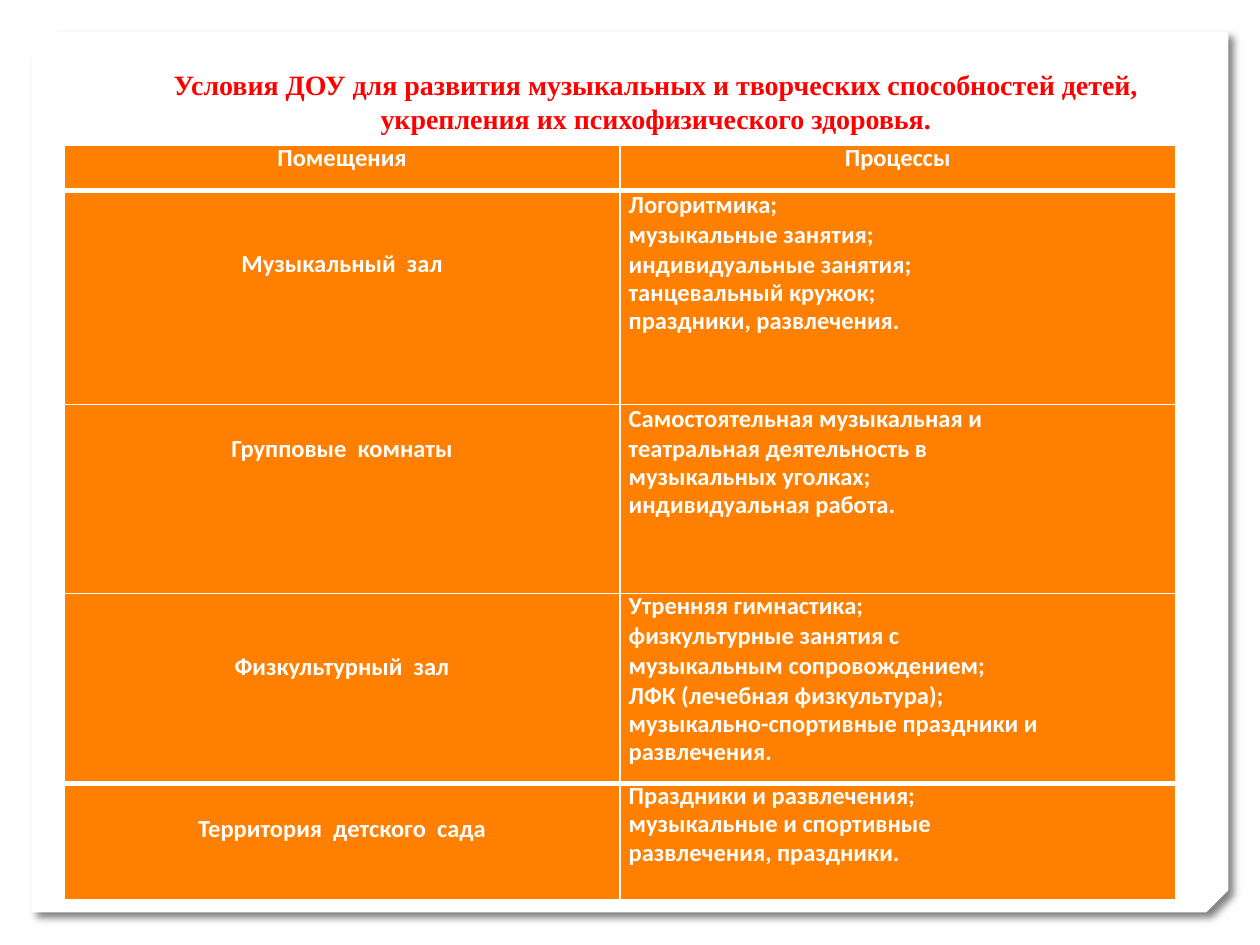
import pptx
import pptx.util
import pptx.dml.color
import pptx.enum.shapes
import pptx.enum.text
import pptx.oxml

Inches, Pt = pptx.util.Inches, pptx.util.Pt
Align = pptx.enum.text.PP_ALIGN
Anchor = pptx.enum.text.MSO_ANCHOR
NS = 'xmlns:a="http://schemas.openxmlformats.org/drawingml/2006/main"'
HUES = {"white": "FFFFFF", "orange": "FF7F01", "red": "FF0000", "shade": "000000"}
CELL = {"name": "Calibri", "size": Pt(14), "bold": True}
HEAD = {"name": "Times New Roman", "size": Pt(16), "bold": True}


def rgb(hue):
    return pptx.dml.color.RGBColor.from_string(HUES[hue])


def write(para, text, form, hue):
    run = para.add_run()
    run.text = text
    for key, value in form.items():
        setattr(run.font, key, value)
    run.font.color.rgb = rgb(hue)


deck = pptx.Presentation()
deck.slide_width, deck.slide_height = Inches(10), Inches(7.5)
slide = deck.slides.add_slide(deck.slide_layouts[6])

# Sheet with cut corners and a soft shadow
sheet = slide.shapes.add_shape(
    pptx.enum.shapes.MSO_SHAPE.SNIP_2_DIAG_RECTANGLE,
    Inches(0.25), Inches(0.25), Inches(9.5), Inches(6.99))
sheet.adjustments[0], sheet.adjustments[1] = 0.025, 0
sheet.fill.solid()
sheet.fill.fore_color.rgb = rgb("white")
sheet.line.fill.background()
sheet.shadow.inherit = False
sheet.element.spPr.append(pptx.oxml.parse_xml(
    f'<a:effectLst {NS}><a:outerShdw blurRad="{Pt(4)}" dist="{Pt(5)}" '
    f'dir="2700000" algn="tl" rotWithShape="0"><a:srgbClr val="{HUES["shade"]}">'
    '<a:alpha val="50000"/></a:srgbClr></a:outerShdw></a:effectLst>'))
for old in sheet.element.spPr.findall(pptx.oxml.ns.qn("a:effectLst"))[:-1]:
    sheet.element.spPr.remove(old)

# Table: room, gap above it, and its activities with exact line spacing
rows = [
    (0.36, 0, "Помещения", [("Процессы", 15.8)]),
    (1.7, 0.47, "Музыкальный  зал", [
        ("Логоритмика;", None),
        ("музыкальные занятия; индивидуальные занятия;", None),
        ("танцевальный кружок;", 16.1),
        ("праздники, развлечения.", 16.1)]),
    (1.5, 0.24, "Групповые  комнаты", [
        ("Самостоятельная музыкальная и театральная деятельность в", None),
        ("музыкальных уголках; индивидуальная работа.", 16.1)]),
    (1.51, 0.47, "Физкультурный  зал", [
        ("Утренняя гимнастика;", 15.8),
        ("физкультурные занятия с", None),
        ("музыкальным сопровождением;", None),
        ("ЛФК (лечебная физкультура);", None),
        ("музыкально-спортивные праздники и развлечения.", 16.1)]),
    (0.92, 0.24, "Территория  детского  сада", [
        ("Праздники и развлечения;", 15.8),
        ("музыкальные и спортивные развлечения, праздники.", 16.1)]),
]
last = len(rows) - 1
grid = slide.shapes.add_table(
    len(rows), 2, Inches(0.51), Inches(1.15), Inches(8.82), Inches(5.98)).table
grid.first_row = grid.horz_banding = False

for r, (tall, gap, room, acts) in enumerate(rows):
    grid.rows[r].height = Inches(tall)
    for c, lines in enumerate([[(room, 15.8 if r == 0 else None)], acts]):
        cell = grid.cell(r, c)
        inset = {"margin_left": 0, "margin_right": 0, "margin_bottom": 0,
                 "margin_top": Inches(gap if c == 0 else 0)}
        for key, value in inset.items():
            setattr(cell, key, value)

        # Thick rules under the header and above the last row
        wide = {"L": 1, "R": 1, "T": 3 if r in (1, last) else 1,
                "B": 3 if r in (0, last - 1) else 1}
        props = cell._tc.get_or_add_tcPr()
        for side, size in wide.items():
            props.append(pptx.oxml.parse_xml(
                f'<a:ln{side} {NS} w="{Pt(size)}"><a:solidFill>'
                f'<a:srgbClr val="{HUES["white"]}"/></a:solidFill></a:ln{side}>'))
        cell.fill.solid()
        cell.fill.fore_color.rgb = rgb("orange")

        mid = r == 0 or c == 0
        left, right = (0.57, 0.57) if mid else (0.07, 1)
        for i, (text, pitch) in enumerate(lines):
            para = cell.text_frame.paragraphs[0] if i == 0 else cell.text_frame.add_paragraph()
            para.alignment = Align.CENTER if mid else Align.LEFT
            if pitch:
                para.line_spacing = Pt(pitch)
            edge = para._p.get_or_add_pPr()
            edge.set("marL", str(Inches(left)))
            edge.set("marR", str(Inches(right)))
            write(para, text, CELL, "white")

# Title
frame = slide.shapes.add_textbox(
    Inches(0.43), Inches(0.53), Inches(9.06), Inches(0.84)).text_frame
form = {"word_wrap": True, "vertical_anchor": Anchor.MIDDLE,
        "margin_left": Inches(0.59), "margin_right": Inches(0.1),
        "margin_top": 0, "margin_bottom": Inches(0.29)}
for key, value in form.items():
    setattr(frame, key, value)
frame.paragraphs[0].alignment = Align.CENTER
write(frame.paragraphs[0],
      "Условия ДОУ для развития музыкальных и творческих способностей детей, "
      "укрепления их психофизического здоровья.", HEAD, "red")

deck.save("out.pptx")
